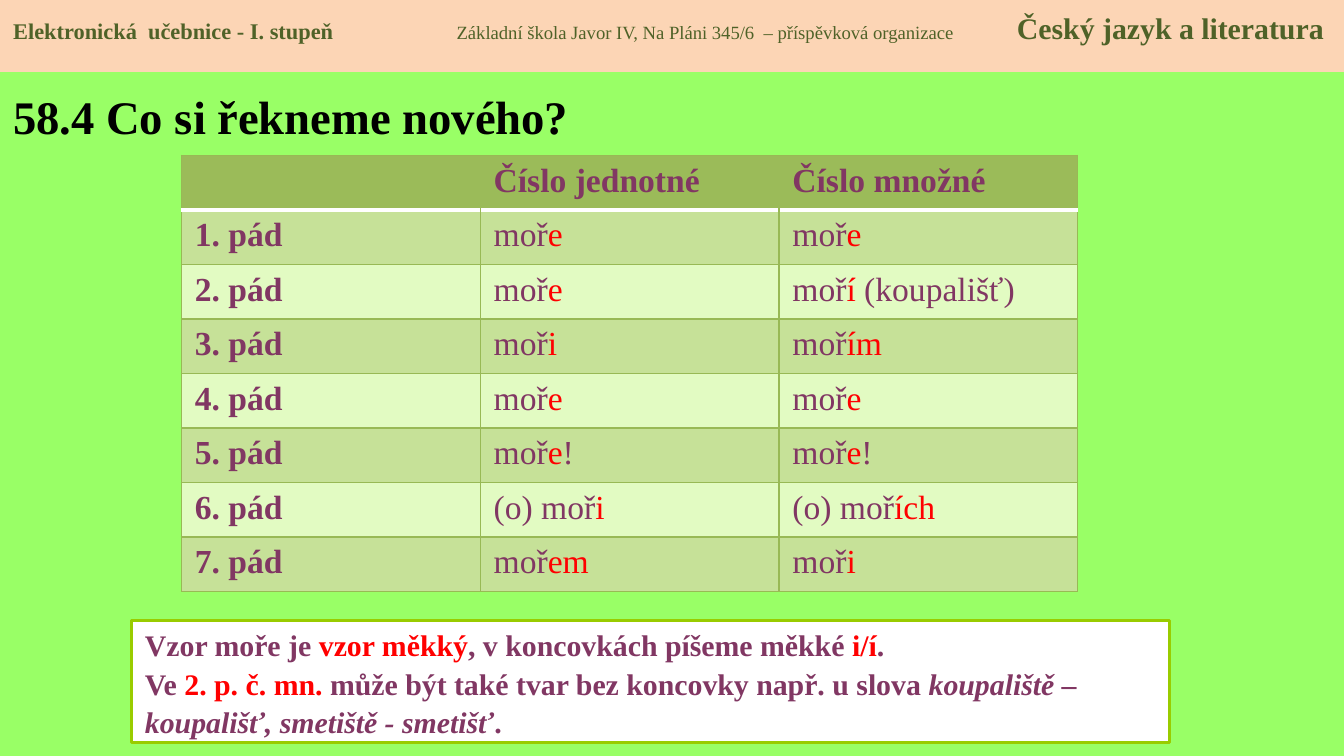
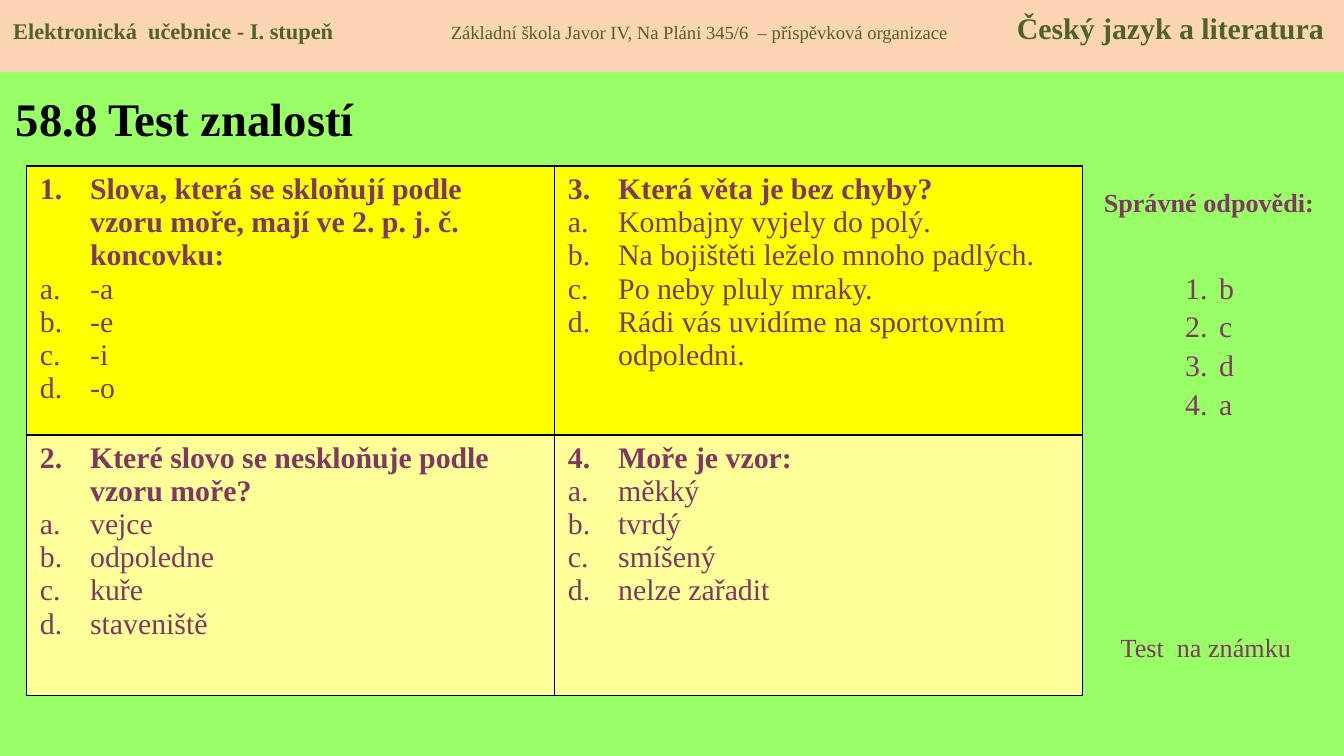
import pptx
import pptx.dml.color
import pptx.enum.shapes
import pptx.enum.text
import pptx.oxml
import pptx.oxml.ns
import pptx.util
from lxml import etree

Cm, Pt = pptx.util.Cm, pptx.util.Pt
ANCHOR = pptx.enum.text.MSO_ANCHOR
ALIGN = pptx.enum.text.PP_ALIGN

BACKGROUND, BAND, OLIVE, PLUM = "99FF66", "FCD5B5", "4F6228", "813763"
RED, BLACK, WHITE, FRAME = "FF0000", "000000", "FFFFFF", "99CC00"
HEAD_ROW, DARK_ROW, LIGHT_ROW, GRID = "9BBB59", "C6E198", "E2FBC2", "98B955"
LINE_SPACING = 1.08

SCHOOL = "Základní škola Javor IV, Na Pláni 345/6  – příspěvková organizace"

CASES = [
    ("1. pád", "moř|e", "moř|e"),
    ("2. pád", "moř|e", "moř|í| (koupališť)"),
    ("3. pád", "moř|i", "moř|ím"),
    ("4. pád", "moř|e", "moř|e"),
    ("5. pád", "moř|e|!", "moř|e|!"),
    ("6. pád", "(o) moř|i", "(o) moř|ích"),
    ("7. pád", "moř|em", "moř|i"),
]

# Questions in reading order of their numbers: down the first column, then the second
QUESTIONS = [
    ("Slova, která se skloňují podle vzoru moře, mají ve 2. p. j. č. koncovku:",
     ["-a", "-e", "-i", "-o"]),
    ("Které slovo se neskloňuje podle vzoru moře?",
     ["vejce", "odpoledne", "kuře", "staveniště"]),
    ("Která věta je bez chyby?",
     ["Kombajny vyjely do polý.", "Na bojištěti leželo mnoho padlých.",
      "Po neby pluly mraky.", "Rádi vás uvidíme na sportovním odpoledni."]),
    ("Moře je vzor:", ["měkký", "tvrdý", "smíšený", "nelze zařadit"]),
]


def rgb(value):
    return pptx.dml.color.RGBColor.from_string(value)


def cm_box(box):
    return [Cm(value) for value in box]


def paint(part, color):
    part.fill.solid()
    part.fill.fore_color.rgb = rgb(color)


# Text
def write(paragraph, text, color=PLUM, **formats):
    run = paragraph.add_run()
    run.text = text
    run.font.color.rgb = rgb(color)
    for name, value in {"name": "Times New Roman", **formats}.items():
        setattr(run.font, name, value)


def write_marked(paragraph, text, **formats):
    """Every second piece between bars is red."""
    for index, piece in enumerate(text.split("|")):
        write(paragraph, piece, RED if index % 2 else PLUM, **formats)


def number(paragraph, scheme, indent, start=1):
    properties = paragraph._p.get_or_add_pPr()
    properties.set("marL", str(Cm(indent)))
    properties.set("indent", str(-Cm(indent)))
    numbering = etree.SubElement(
        properties, pptx.oxml.ns.qn("a:buAutoNum"), type=scheme)
    if start > 1:
        numbering.set("startAt", str(start))


def paragraphs(frame, count):
    return [frame.paragraphs[0]] + [frame.add_paragraph() for _ in range(count - 1)]


def set_frame(frame, **formats):
    for name, value in {"word_wrap": True, "margin_top": Cm(0.18),
                        "vertical_anchor": ANCHOR.TOP, **formats}.items():
        setattr(frame, name, value)
    return frame


def text_frame(slide, box, **formats):
    return set_frame(slide.shapes.add_textbox(*cm_box(box)).text_frame, **formats)


def rectangle(slide, box, fill, line=None):
    shape = slide.shapes.add_shape(
        pptx.enum.shapes.MSO_SHAPE.RECTANGLE, *cm_box(box))
    shape.shadow.inherit = False
    paint(shape, fill)
    if line:
        shape.line.color.rgb = rgb(line)
        shape.line.width = Pt(1.5)
    else:
        shape.line.fill.background()
    return shape.text_frame


# Tables
def set_borders(cell, **sides):
    """Each side is a (colour, points) pair, or None for no line."""
    properties = cell._tc.get_or_add_tcPr()
    for index, side in enumerate("LRTB"):
        line = etree.Element(pptx.oxml.ns.qn("a:ln" + side))
        if sides[side]:
            color, width = sides[side]
            line.set("w", str(Pt(width)))
            solid = etree.SubElement(line, pptx.oxml.ns.qn("a:solidFill"))
            etree.SubElement(solid, pptx.oxml.ns.qn("a:srgbClr"), val=color)
        else:
            etree.SubElement(line, pptx.oxml.ns.qn("a:noFill"))
        properties.insert(index, line)


def add_grid(slide, box, row_heights, column_count):
    left, top, width, height = box
    table = slide.shapes.add_table(
        len(row_heights), column_count, *cm_box(box)).table
    table.first_row = table.horz_banding = False
    for column in table.columns:
        column.width = Cm(width / column_count)
    for row, row_height in zip(table.rows, row_heights):
        row.height = Cm(row_height)
    return table


# Shared parts
def add_header(slide, box, school_tab):
    frame = set_frame(rectangle(slide, box, BAND))
    line = frame.paragraphs[0]
    line.alignment = ALIGN.LEFT
    tabs = etree.SubElement(line._p.get_or_add_pPr(), pptx.oxml.ns.qn("a:tabLst"))
    for position in (school_tab, 18.97):
        etree.SubElement(tabs, pptx.oxml.ns.qn("a:tab"),
                         pos=str(Cm(position)), algn="l")
    write(line, "Elektronická  učebnice - I. stupeň\t", OLIVE, size=Pt(12), bold=True)
    write(line, SCHOOL + "\t", OLIVE, size=Pt(10), bold=False)
    write(line, "Český jazyk a literatura", OLIVE, size=Pt(16), bold=True)


def add_title(slide, box, text):
    frame = text_frame(slide, box, vertical_anchor=ANCHOR.MIDDLE, margin_top=Cm(0.13))
    write(frame.paragraphs[0], text, BLACK, size=Pt(25), bold=True)


def new_slide(deck, title, title_box, school_tab):
    slide = deck.slides.add_slide(deck.slide_layouts[6])
    paint(slide.background, BACKGROUND)
    add_header(slide, (0, 0, 25.4, 1.36), school_tab)
    add_title(slide, title_box, title)
    return slide


# Declension slide
def add_declension(slide, box):
    rows = [("", "Číslo jednotné", "Číslo množné"), *CASES]
    table = add_grid(slide, box, [box[3] / len(rows)] * len(rows), 3)
    thin, thick = (GRID, 0.75), (WHITE, 2)
    for r, texts in enumerate(rows):
        for c, text in enumerate(texts):
            cell = table.cell(r, c)
            paint(cell, HEAD_ROW if r == 0 else DARK_ROW if r % 2 else LIGHT_ROW)
            set_borders(cell,
                        L=thin if r or c == 0 else None,
                        R=thin if r or c == 2 else None,
                        T=thick if r == 1 else thin,
                        B=thick if r == 0 else thin)
            if text:
                write_marked(cell.text_frame.paragraphs[0], text,
                             size=Pt(18), bold=r == 0 or c == 0)


def add_rule(slide, box):
    frame = set_frame(rectangle(slide, box, WHITE, FRAME),
                      vertical_anchor=ANCHOR.MIDDLE, margin_top=Cm(0.13))
    style = {"size": Pt(16), "bold": True}
    pattern, exception = paragraphs(frame, 2)
    for line in (pattern, exception):
        line.alignment = ALIGN.LEFT
        line.line_spacing = LINE_SPACING
    write_marked(pattern, "Vzor moře je |vzor měkký|, v koncovkách píšeme měkké |i/í|.",
                 **style)
    write_marked(exception, "Ve |2. p. č. mn.| může být také tvar bez koncovky "
                            "např. u slova", **style)
    write(exception, " koupaliště – koupališť, smetiště - smetišť", italic=True, **style)
    write(exception, ".", **style)


# Test slide
def add_quiz(slide, box):
    table = add_grid(slide, box, [5.08, 4.93], 2)
    edge = (BLACK, 1)
    for index, (question, options) in enumerate(QUESTIONS):
        column, row = divmod(index, 2)
        cell = table.cell(row, column)
        paint(cell, "FFFF99" if row else "FFFF00")
        set_borders(cell, L=edge, R=edge, T=edge, B=edge)
        first, *others = paragraphs(cell.text_frame, 1 + len(options))
        number(first, "arabicPeriod", 0.95, index + 1)
        write(first, question, size=Pt(16), bold=True)
        for line, option in zip(others, options):
            number(line, "alphaLcPeriod", 0.95)
            write(line, option, size=Pt(16), bold=False)


def add_answers(slide, box):
    left, top, width, height = box
    heading = text_frame(slide, (left, top, width, 0.86)).paragraphs[0]
    heading.alignment = ALIGN.CENTER
    write(heading, "Správné odpovědi:", size=Pt(14), bold=True)

    key = text_frame(slide, (left + 1.7, top + 0.84, 1.4, 5.05), margin_top=Cm(0.85))
    for line, answer in zip(paragraphs(key, 4), "bcda"):
        line.line_spacing = LINE_SPACING
        number(line, "arabicPeriod", 0.64)
        write(line, answer, size=Pt(16))

    graded = text_frame(slide, (left + 0.48, top + height - 0.86, 3.99, 0.86))
    write(graded.paragraphs[0], "Test  na známku", size=Pt(14))


def main():
    deck = pptx.Presentation()
    deck.slide_width, deck.slide_height = Cm(25.4), Cm(14.29)

    declension = new_slide(deck, "58.4 Co si řekneme nového?",
                           (0, 1.37, 11.91, 1.65), 8.38)
    add_declension(declension, (3.43, 2.94, 16.94, 8.24))
    add_rule(declension, (2.49, 11.73, 19.61, 2.31))

    test = new_slide(deck, "58.8 Test znalostí", (0.05, 1.4, 8.1, 1.65), 8.27)
    add_quiz(test, (0.5, 3.14, 19.96, 10.01))
    add_answers(test, (20.45, 3.35, 4.8, 9.27))

    deck.save("out.pptx")


if __name__ == "__main__":
    main()
